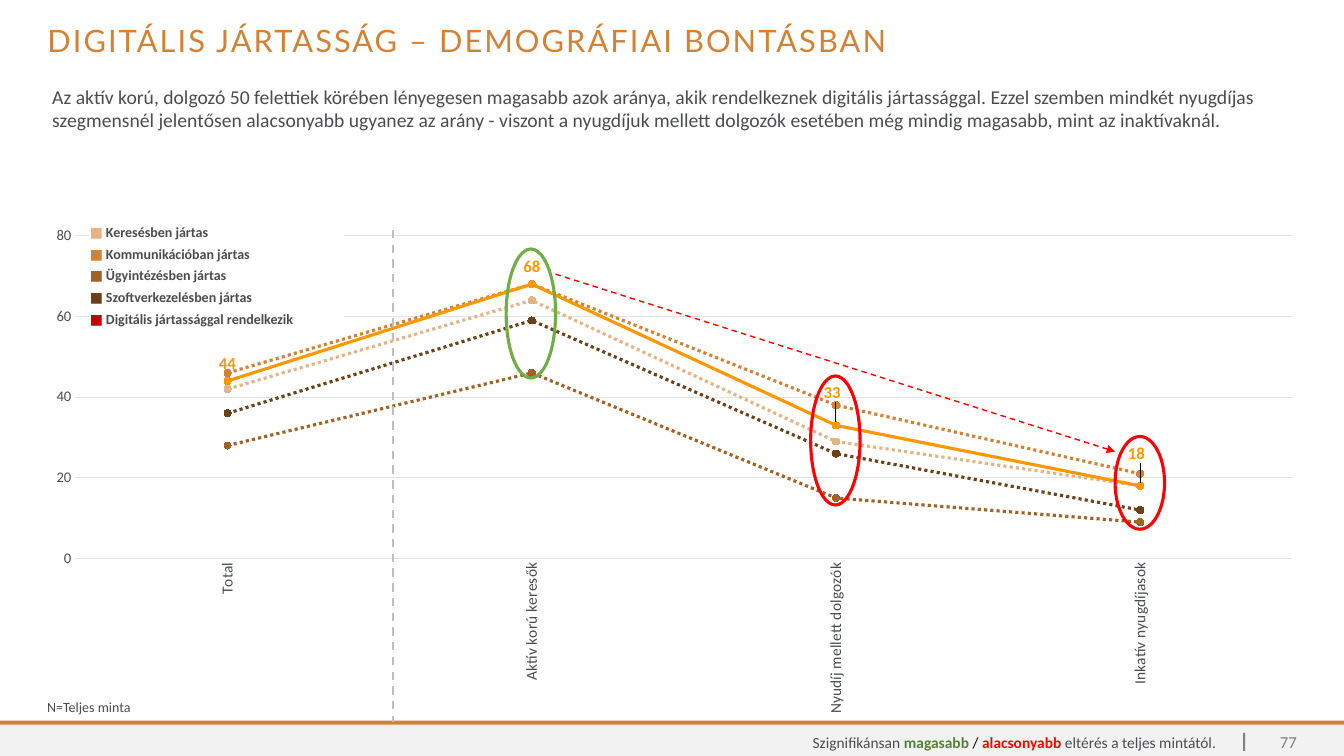
from lxml import etree
from pptx import Presentation
from pptx import util as u
from pptx.chart.data import CategoryChartData
from pptx.dml.color import RGBColor
from pptx.enum import chart as ch, dml, shapes, text
from pptx.oxml import parse_xml
from pptx.oxml.ns import nsdecls, qn

INK = {
    "text": "4A4C4F", "brand": "D38235", "sand": "E5B486", "brown": "A36123",
    "dark": "6C4118", "gold": "FF9800", "grid": "E3E4E5", "band": "F2F2F2",
    "gray": "808080", "dash": "BFBFBF", "red": "FF0000", "wine": "C00000",
    "lime": "70AD47", "green": "548235", "black": "000000", "white": "FFFFFF",
}
CATS = ["Total", "Aktív korú keresők", "Nyudíj mellett dolgozók",
        "Inkatív nyugdíjasok"]
SKILLS = [
    ("Keresésben jártas", "sand", (42, 64, 29, 18)),
    ("Kommunikációban jártas", "brand", (46, 68, 38, 21)),
    ("Ügyintézésben jártas", "brown", (28, 46, 15, 9)),
    ("Szoftverkezelésben jártas", "dark", (36, 59, 26, 12)),
    ("Digitális jártassággal rendelkezik", "gold", (44, 68, 33, 18)),
]


def hue(name):
    return RGBColor.from_string(INK[name])


def place(tag, x, y, w=None, h=None):
    """Manual layout element of a chart part."""
    parts = [("xMode", "edge"), ("yMode", "edge")] if w else []
    parts += [("x", x), ("y", y)]
    if w:
        parts += [("w", w), ("h", h)]
        parts.insert(0, ("layoutTarget", "inner"))
    body = "".join(f'<c:{k} val="{v}"/>' for k, v in parts)
    return parse_xml(f'<c:{tag} {nsdecls("c")}><c:manualLayout>{body}'
                     f'</c:manualLayout></c:{tag}>')


class Page:
    def __init__(self, deck, face="Calibri"):
        self.slide = deck.slides.add_slide(deck.slide_layouts[5])
        self.items = self.slide.shapes
        self.face = face

    def font(self, font, size, color="text", bold=False, face=None):
        font.name, font.size = face or self.face, u.Pt(size)
        font.bold, font.color.rgb = bold, hue(color)

    def runs(self, para, parts, size, bold=False):
        """Fill a paragraph with (words, colour, bold) parts."""
        self.font(para.font, size, bold=bold)
        for words, color, heavy in parts:
            run = para.add_run()
            run.text = words
            run.font.color.rgb, run.font.bold = hue(color), heavy

    def title(self, words, box):
        head = self.items.title
        head.left, head.top, head.width, head.height = map(u.Inches, box)
        frame = head.text_frame
        frame.text = words
        frame.auto_size = text.MSO_AUTO_SIZE.NONE
        frame.vertical_anchor = text.MSO_ANCHOR.TOP
        para = frame.paragraphs[0]
        para.alignment, para.line_spacing = text.PP_ALIGN.LEFT, 0.9
        self.font(para.font, 22, "brand", face="Lato")
        para.runs[0]._r.get_or_add_rPr().set("spc", "150")

    def text(self, parts, box, size, right=False):
        frame = self.items.add_textbox(*map(u.Inches, box)).text_frame
        frame.word_wrap = True
        para = frame.paragraphs[0]
        if right:
            para.alignment = text.PP_ALIGN.RIGHT
            frame.vertical_anchor = text.MSO_ANCHOR.MIDDLE
        self.runs(para, parts, size)

    def bar(self, box, color):
        item = self.items.add_shape(shapes.MSO_SHAPE.RECTANGLE,
                                    *map(u.Inches, box))
        item.shadow.inherit = False
        item.fill.solid()
        item.fill.fore_color.rgb = hue(color)
        item.line.fill.background()

    def ring(self, box, color):
        item = self.items.add_shape(shapes.MSO_SHAPE.OVAL,
                                    *map(u.Inches, box))
        item.shadow.inherit = False
        item.fill.background()
        item.line.color.rgb, item.line.width = hue(color), u.Pt(2.25)

    def dash(self, ends, color, width, arrow=False):
        item = self.items.add_connector(shapes.MSO_CONNECTOR.STRAIGHT,
                                        *map(u.Inches, ends))
        item.line.color.rgb, item.line.width = hue(color), u.Pt(width)
        item.line.dash_style = dml.MSO_LINE.DASH
        props = item._element.spPr
        if arrow:
            etree.SubElement(props.find(qn("a:ln")), qn("a:tailEnd"),
                             type="triangle")
        etree.SubElement(props, qn("a:effectLst"))

    def legend(self, rows, box):
        table = self.items.add_table(len(rows), 1, *map(u.Inches, box)).table
        table.first_row = table.horz_banding = False
        for i, (name, color) in enumerate(rows):
            cell = table.cell(i, 0)
            cell.fill.solid()
            cell.fill.fore_color.rgb = hue("white")
            cell.margin_left = cell.margin_right = 0
            cell.margin_top = cell.margin_bottom = 0
            cell.vertical_anchor = text.MSO_ANCHOR.MIDDLE
            self.runs(cell.text_frame.paragraphs[0],
                      [("■", color, True), (" " + name, "text", True)],
                      10, True)

    def axis(self, axis, size):
        axis.major_tick_mark = axis.minor_tick_mark = ch.XL_TICK_MARK.NONE
        self.font(axis.tick_labels.font, size)

    def chart(self, box):
        data = CategoryChartData(number_format="0")
        data.categories = CATS
        for name, _, vals in SKILLS:
            data.add_series(name, vals)
        chart = self.items.add_chart(ch.XL_CHART_TYPE.LINE_MARKERS,
                                     *map(u.Inches, box), data).chart
        chart.has_legend = chart.has_title = False
        self.font(chart.font, 10)
        area = chart._chartSpace.chart.plotArea
        for old in area.findall(qn("c:layout")):
            area.remove(old)
        area.insert(0, place("layout", 0.03, 0.032, 0.958, 0.643))

        # Axes
        cat, val = chart.category_axis, chart.value_axis
        self.axis(cat, 11)
        self.axis(val, 10.5)
        val.minimum_scale, val.maximum_scale, val.major_unit = 0, 80, 20
        val.format.line.fill.background()
        for line in (cat.format.line, val.major_gridlines.format.line):
            line.color.rgb, line.width = hue("grid"), u.Pt(0.75)
        turn = cat._element.find(qn("c:txPr")).find(qn("a:bodyPr"))
        turn.set("rot", "-5400000")
        turn.set("vert", "horz")

        # Lines and markers
        plot = chart.plots[0]
        plot.vary_by_categories = False
        for row, (_, color, _) in zip(plot.series, SKILLS):
            row.smooth = False
            line, mark = row.format.line, row.marker
            line.color.rgb, line.width = hue(color), u.Pt(2.25)
            if color != "gold":
                line.dash_style = dml.MSO_LINE.ROUND_DOT
            mark.style, mark.size = ch.XL_MARKER_STYLE.CIRCLE, 5
            mark.format.fill.solid()
            mark.format.fill.fore_color.rgb = hue(color)
            mark.format.line.color.rgb = hue(color)

        # Values of the main line, the last two nudged clear of it
        total = plot.series[-1]
        for i, lift in enumerate((0, 0, -0.03, -0.03)):
            label = total.points[i].data_label
            self.font(label.font, 12, "gold", True)
            label.position = ch.XL_LABEL_POSITION.ABOVE
            if lift:
                node = label._dLbl
                node.insert(1, place("layout", -0.003, lift))


def main():
    deck = Presentation()
    deck.slide_width, deck.slide_height = u.Inches(13.33), u.Inches(7.5)
    page = Page(deck)

    # Footer band
    page.bar((0, 7.19, 13.33, 0.31), "band")
    page.bar((0, 7.15, 13.33, 0.04), "brand")
    page.bar((12.33, 7.27, 0.02, 0.18), "gray")

    # Heading and message
    page.title("DIGITÁLIS JÁRTASSÁG – DEMOGRÁFIAI BONTÁSBAN",
               (0.37, 0.21, 12.6, 0.46))
    page.text([("Az aktív korú, dolgozó 50 felettiek körében lényegesen "
                "magasabb azok aránya, akik rendelkeznek digitális "
                "jártassággal. Ezzel szemben mindkét nyugdíjas szegmensnél "
                "jelentősen alacsonyabb ugyanez az arány - viszont a "
                "nyugdíjuk mellett dolgozók esetében még mindig magasabb, "
                "mint az inaktívaknál.", "text", False)],
              (0.42, 0.79, 12.5, 0.73), 14)

    # Chart with its legend
    page.chart((0.37, 2.18, 12.6, 4.98))
    page.dash((3.9, 2.28, 3.9, 7.16), "dash", 1.5)
    keys = [(name, color if color != "gold" else "wine")
            for name, color, _ in SKILLS]
    page.legend(keys, (0.89, 2.2, 2.52, 1.08))

    # Highlights
    for x, y, h, color in ((5.02, 2.47, 1.28, "lime"),
                           (8.04, 3.73, 1.28, "red"),
                           (11.06, 4.33, 0.92, "red")):
        page.ring((x, y, 0.49, h), color)
    page.dash((5.51, 2.72, 11.06, 4.48), "red", 1, arrow=True)

    # Notes in the footer
    page.text([("N=Teljes minta", "text", False)],
              (0.37, 6.88, 2.79, 0.28), 10)
    page.text([("Szignifikánsan ", "text", False),
               ("magasabb ", "green", True), ("/ ", "black", False),
               ("alacsonyabb ", "red", True),
               ("eltérés a teljes mintától.", "text", False)],
              (4.54, 7.27, 7.62, 0.18), 11, right=True)
    page.text([("77", "gray", False)], (12.49, 7.27, 0.47, 0.18), 12,
              right=True)

    deck.save("out.pptx")


if __name__ == "__main__":
    main()
